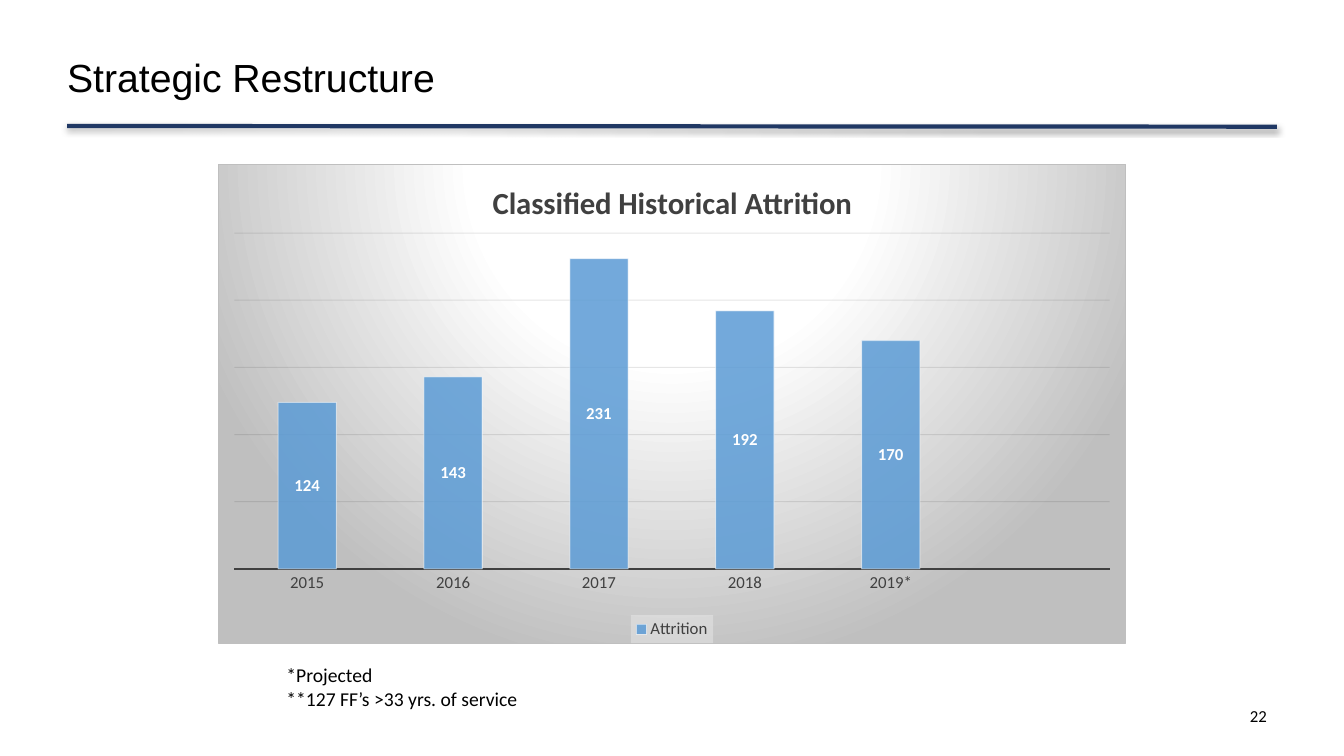
from lxml import etree
from pptx import Presentation
from pptx.chart.data import CategoryChartData
from pptx.dml.color import RGBColor
from pptx.enum.chart import XL_CHART_TYPE as ChartType, XL_LABEL_POSITION as LabelPos
from pptx.enum.chart import XL_LEGEND_POSITION as LegendPos, XL_TICK_MARK as Tick
from pptx.enum.shapes import MSO_CONNECTOR as Connector
from pptx.enum.text import MSO_ANCHOR as Anchor, MSO_AUTO_SIZE as AutoSize, PP_ALIGN as Align
from pptx.oxml import parse_xml
from pptx.oxml.ns import qn
from pptx.util import Pt

BLACK = RGBColor(0, 0, 0)
WHITE = RGBColor(0xFF, 0xFF, 0xFF)
NAVY = RGBColor(0x20, 0x38, 0x64)
BLUE = RGBColor(0x5B, 0x9B, 0xD5)
DARK = RGBColor(0x40, 0x40, 0x40)
GRID = RGBColor(0x0D, 0x0D, 0x0D)

NS = ('xmlns:a="http://schemas.openxmlformats.org/drawingml/2006/main" '
      'xmlns:c="http://schemas.openxmlformats.org/drawingml/2006/chart"')
RULE_SHADOW = (f'<a:effectLst {NS}><a:outerShdw blurRad="63500" dist="20320" dir="5400000">'
               '<a:srgbClr val="000000"><a:alpha val="38000"/></a:srgbClr>'
               '</a:outerShdw></a:effectLst>')
CHART_FILL = (f'<c:spPr {NS}><a:gradFill><a:gsLst>'
              '<a:gs pos="0"><a:srgbClr val="FFFFFF"/></a:gs>'
              '<a:gs pos="39000"><a:srgbClr val="FFFFFF"/></a:gs>'
              '<a:gs pos="100000"><a:srgbClr val="BFBFBF"/></a:gs></a:gsLst>'
              '<a:path path="circle"><a:fillToRect l="50000" t="-80000" r="50000" b="180000"/>'
              '</a:path></a:gradFill><a:ln w="9525"><a:solidFill><a:srgbClr val="BFBFBF"/>'
              '</a:solidFill></a:ln></c:spPr>')
LEGEND_FILL = (f'<c:spPr {NS}><a:solidFill><a:srgbClr val="F2F2F2"><a:alpha val="39000"/>'
               '</a:srgbClr></a:solidFill></c:spPr>')


def set_font(font, size, color, name="Calibri", bold=False):
    for key, value in {"size": Pt(size), "name": name, "bold": bold}.items():
        setattr(font, key, value)
    font.color.rgb = color


def set_line(line, color, width):
    line.color.rgb = color
    line.width = Pt(width)


def set_alpha(element, *percents):
    """Give the colours below an element their opacities, in order."""
    for color, percent in zip(element.iter(qn("a:srgbClr")), percents):
        etree.SubElement(color, qn("a:alpha")).set("val", str(percent * 1000))


def set_layout(parent, modes, percents):
    """Place a chart part, in percent of the chart's size."""
    layout = parent.find(qn("c:layout"))
    if layout is None:
        layout = etree.Element(qn("c:layout"))
        parent.insert(0, layout)
    manual = etree.SubElement(layout, qn("c:manualLayout"))
    shares = {key: round(value / 100, 4) for key, value in percents.items()}
    for key, value in {**modes, "xMode": "edge", "yMode": "edge", **shares}.items():
        etree.SubElement(manual, qn("c:" + key)).set("val", str(value))


def add_text(page, lines, place, size, font="Calibri", align=Align.LEFT, **frame_format):
    box = page.shapes.add_textbox(*map(Pt, place))
    frame = box.text_frame
    for key, value in frame_format.items():
        setattr(frame, key, value)
    for index, line in enumerate(lines):
        para = frame.add_paragraph() if index else frame.paragraphs[0]
        para.alignment = align
        span = para.add_run()
        span.text = line
        set_font(span.font, size, BLACK, font)
    return box


def add_rule(page, start, end):
    rule = page.shapes.add_connector(Connector.STRAIGHT, *map(Pt, start + end))
    set_line(rule.line, NAVY, 3)
    rule._element.spPr.append(parse_xml(RULE_SHADOW))


def add_attrition_chart(page, place):
    data = CategoryChartData()
    data.categories = ["2015", "2016", "2017", "2018", "2019*", ""]
    data.add_series("Attrition", [124, 143, 231, 192, 170, None])
    chart = page.shapes.add_chart(ChartType.COLUMN_STACKED, *map(Pt, place), data).chart
    set_font(chart.font, 10, BLACK)
    chart._chartSpace.find(qn("c:txPr")).addprevious(parse_xml(CHART_FILL))

    # Title
    chart.has_title = True
    title = chart.chart_title
    span = title.text_frame.paragraphs[0].add_run()
    span.text = "Classified Historical Attrition"
    set_font(span.font, 22, DARK, bold=True)
    set_layout(title._element, {}, {"x": 29.6, "y": 2.3})

    # Bars and their labels
    plot = chart.plots[0]
    for key, value in {"gap_width": 150, "overlap": 100, "vary_by_categories": False,
                       "has_data_labels": True}.items():
        setattr(plot, key, value)
    labels = plot.data_labels
    labels.show_value = True
    labels.position = LabelPos.CENTER
    set_font(labels.font, 12, WHITE, bold=True)
    bars = plot.series[0]
    bars.format.fill.solid()
    bars.format.fill.fore_color.rgb = BLUE
    set_line(bars.format.line, WHITE, 0.75)
    set_alpha(bars._element.find(qn("c:spPr")), 85, 50)
    set_layout(plot._element.getparent(), {"layoutTarget": "inner"},
               {"x": 1.7, "y": 14.3, "w": 96.6, "h": 70.2})

    # Axes
    years = chart.category_axis
    years.major_tick_mark = years.minor_tick_mark = Tick.NONE
    set_font(years.tick_labels.font, 12, DARK)
    set_line(years.format.line, DARK, 1.5)
    counts = chart.value_axis
    for key, value in {"visible": False, "minimum_scale": 0, "maximum_scale": 250,
                       "major_unit": 50, "has_major_gridlines": True}.items():
        setattr(counts, key, value)
    set_line(counts.major_gridlines.format.line, GRID, 0.75)
    set_alpha(counts._element.find(qn("c:majorGridlines")), 10)

    # Legend
    chart.has_legend = True
    legend = chart.legend
    legend.position = LegendPos.BOTTOM
    legend.include_in_layout = False
    set_font(legend.font, 12, DARK)
    legend._element.find(qn("c:txPr")).addprevious(parse_xml(LEGEND_FILL))


def main():
    deck = Presentation()
    deck.slide_width, deck.slide_height = Pt(960), Pt(540)
    page = deck.slides.add_slide(deck.slide_layouts[6])

    # Heading
    add_rule(page, (48, 90), (912, 90.5))
    heading = add_text(page, ["Strategic Restructure"], (48, 24, 659, 66), 28, "Arial",
                       word_wrap=True, vertical_anchor=Anchor.MIDDLE, margin_left=0,
                       margin_right=0, margin_top=0, margin_bottom=0)
    heading.text_frame.paragraphs[0].line_spacing = 0.9

    # Chart
    add_attrition_chart(page, (156, 117.25, 648, 342.5))

    # Page number and footnotes
    add_text(page, ["22"], (688, 500.5, 224, 28.75), 12, align=Align.RIGHT, word_wrap=True)
    add_text(page, ["*Projected", "**127 FF’s >33 yrs. of service"], (197.5, 470, 181, 41), 14,
             word_wrap=False, auto_size=AutoSize.SHAPE_TO_FIT_TEXT)

    deck.save("out.pptx")


if __name__ == "__main__":
    main()
